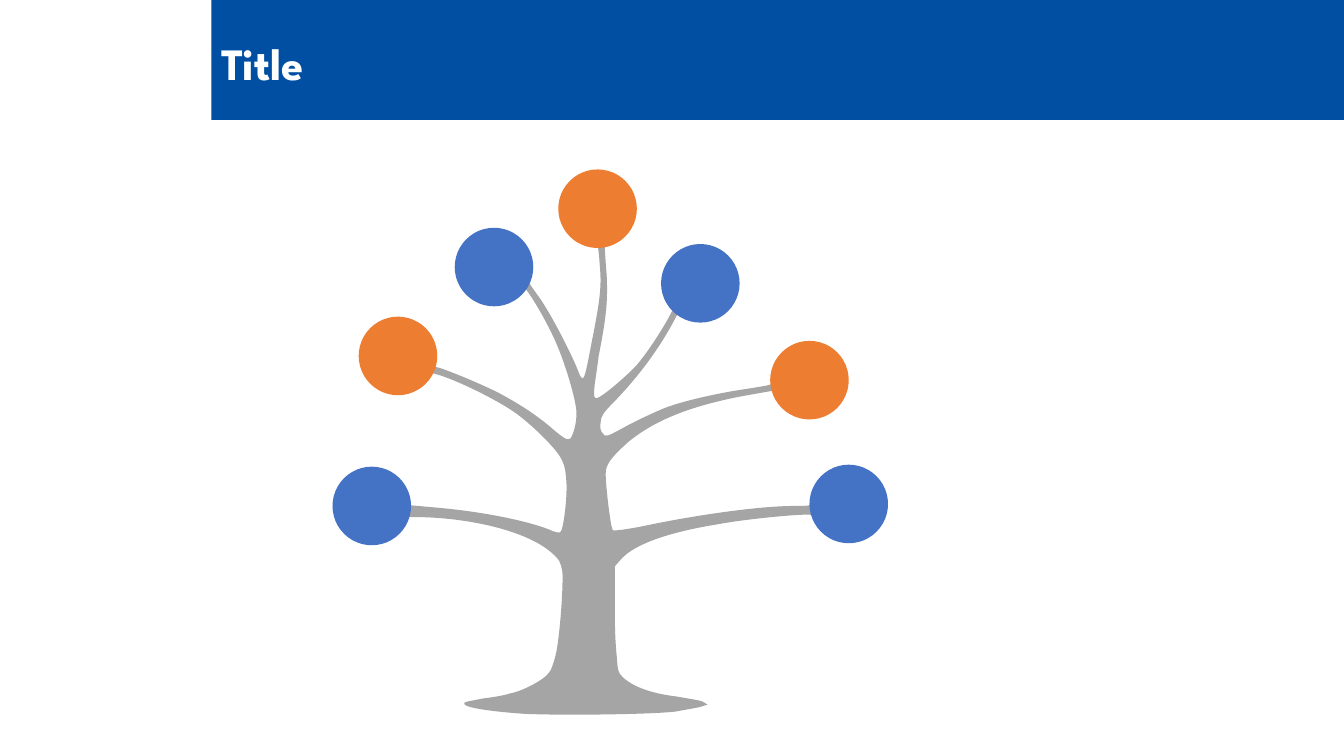
from dataclasses import dataclass

from lxml import etree
from pptx import Presentation
from pptx.dml.color import RGBColor
from pptx.enum.shapes import MSO_SHAPE
from pptx.enum.text import MSO_ANCHOR
from pptx.oxml.ns import qn
from pptx.util import Cm, Pt

RECTANGLE, OVAL = MSO_SHAPE.RECTANGLE, MSO_SHAPE.OVAL
MIDDLE = MSO_ANCHOR.MIDDLE


@dataclass(frozen=True)
class Theme:
    font: str = "League Spartan"
    title_size: int = 32
    white: str = "FFFFFF"
    banner: str = "014FA2"
    trunk: str = "A5A5A5"
    orange: str = "ED7D31"
    blue: str = "4472C4"


SLIDE_WIDTH, SLIDE_HEIGHT = 33.87, 19.05
BANNER_LEFT, BANNER_HEIGHT = 5.33, 3.02
BANNER_WIDTH = SLIDE_WIDTH - BANNER_LEFT
TITLE_TOP, TITLE_HEIGHT = 0.84, 1.45
TITLE_INDENT = 1
FRUIT_SIZE = 1.98
ORANGE_FRUITS = [(9.04, 7.98), (14.07, 4.27), (19.41, 8.59)]
BLUE_FRUITS = [(8.38, 11.76), (11.46, 5.74), (16.66, 6.15), (20.4, 11.71)]

# Tree outline in units of 0.25 mm: each row is two control points and an end point.
TREE_UNIT = Cm(2.54) / 100
TREE_START = (589, 237)
TOP_BRANCH_LEFT = [
    (593, 240, 594, 246, 595, 262), (597, 283, 596, 295, 587, 340),
    (579, 382, 579, 382, 572, 364),
]
UPPER_LEFT_BRANCH = [
    (563, 343, 545, 309, 535, 295), (529, 287, 524, 279, 523, 278),
    (523, 278, 523, 277, 523, 276), (522, 278, 520, 280, 518, 283),
    (523, 286, 539, 313, 548, 332), (559, 354, 572, 397, 572, 410),
    (572, 420, 569, 431, 566, 435),
]
MIDDLE_LEFT_BRANCH = [
    (563, 437, 561, 436, 550, 427), (534, 413, 519, 403, 497, 391),
    (480, 382, 446, 368, 436, 365), (431, 364, 429, 363, 428, 361),
    (427, 364, 426, 367, 425, 370), (425, 370, 426, 370, 426, 370),
    (437, 370, 481, 390, 506, 406), (522, 416, 547, 440, 555, 452),
    (560, 460, 561, 464, 562, 478), (563, 494, 559, 526, 556, 528),
]
LOWER_LEFT_BRANCH = [
    (555, 529, 550, 528, 544, 525), (520, 516, 476, 507, 426, 503),
    (415, 502, 405, 501, 400, 501), (400, 505, 400, 509, 399, 513),
    (399, 513, 415, 513, 415, 513), (470, 514, 525, 528, 548, 549),
    (555, 555, 556, 557, 558, 567),
]
TRUNK_AND_ROOTS = [
    (559, 580, 556, 626, 552, 647), (550, 656, 547, 665, 545, 667),
    (541, 674, 518, 686, 506, 688), (500, 690, 488, 692, 479, 693),
    (470, 695, 462, 696, 461, 697), (457, 701, 478, 705, 517, 708),
    (550, 710, 644, 709, 670, 706), (681, 704, 693, 702, 696, 701),
    (696, 701, 702, 699, 702, 699), (702, 699, 697, 696, 697, 696),
    (695, 695, 683, 693, 671, 691), (647, 688, 629, 682, 618, 672),
    (613, 667, 613, 665, 612, 652), (610, 632, 610, 617, 610, 587),
    (610, 587, 610, 562, 610, 562), (610, 562, 617, 554, 617, 554),
]
LOWER_RIGHT_BRANCH = [
    (630, 540, 663, 528, 713, 520), (739, 515, 801, 509, 805, 511),
    (805, 511, 806, 511, 806, 511), (805, 508, 805, 505, 805, 501),
    (805, 500, 805, 499, 805, 498), (805, 499, 804, 500, 804, 501),
    (802, 502, 795, 502, 788, 502), (756, 502, 696, 510, 643, 521),
    (624, 525, 609, 527, 608, 526), (606, 524, 601, 483, 601, 470),
]
MIDDLE_RIGHT_BRANCH = [
    (601, 461, 606, 454, 624, 438), (651, 416, 689, 401, 748, 391),
    (748, 391, 771, 387, 771, 387), (769, 385, 768, 382, 767, 380),
    (767, 381, 766, 381, 766, 381), (765, 382, 753, 384, 740, 386),
    (712, 390, 677, 398, 659, 405), (652, 408, 636, 415, 623, 422),
    (601, 434, 601, 434, 598, 430), (596, 428, 595, 424, 596, 419),
]
UPPER_RIGHT_BRANCH = [
    (596, 413, 599, 409, 609, 399), (636, 371, 656, 343, 671, 314),
    (672, 311, 674, 308, 675, 306), (673, 305, 671, 303, 670, 302),
    (664, 316, 647, 344, 632, 362), (621, 374, 596, 395, 592, 395),
    (589, 395, 589, 393, 590, 382),
]
TOP_BRANCH_RIGHT = [
    (591, 375, 593, 362, 594, 353), (602, 313, 603, 298, 602, 274),
    (601, 261, 600, 247, 600, 243), (600, 243, 599, 237, 599, 237),
    (597, 237, 596, 237, 594, 237), (592, 237, 590, 237, 589, 237),
]
TREE_CURVES = (
    TOP_BRANCH_LEFT + UPPER_LEFT_BRANCH + MIDDLE_LEFT_BRANCH + LOWER_LEFT_BRANCH
    + TRUNK_AND_ROOTS + LOWER_RIGHT_BRANCH + MIDDLE_RIGHT_BRANCH
    + UPPER_RIGHT_BRANCH + TOP_BRANCH_RIGHT
)


def write_text(box, text, *, font, size, color, bold=False, hanging=0):
    para = box.text_frame.paragraphs[0]
    properties = para._p.get_or_add_pPr()
    properties.set("marL", str(Cm(hanging)))
    properties.set("indent", str(-Cm(hanging)))
    span = para.add_run()
    span.text = text
    span.font.name = font
    span.font.size = Pt(size)
    span.font.bold = bold
    span.font.color.rgb = RGBColor.from_string(color)


class Page:
    """Draws on one slide in the style of a theme; lengths are centimetres."""

    def __init__(self, slide, theme):
        self.shapes = slide.shapes
        self.theme = theme

    def paint(self, shape, color):
        shape.shadow.inherit = False
        shape.fill.solid()
        shape.fill.fore_color.rgb = RGBColor.from_string(color)
        shape.line.fill.background()

    def shape(self, kind, left, top, width, height, color):
        shape = self.shapes.add_shape(kind, Cm(left), Cm(top), Cm(width), Cm(height))
        self.paint(shape, color)

    def title(self, text, left, top, width, height):
        box = self.shapes.add_textbox(Cm(left), Cm(top), Cm(width), Cm(height))
        box.text_frame.word_wrap = True
        box.text_frame.vertical_anchor = MIDDLE
        write_text(box, text, font=self.theme.font, size=self.theme.title_size,
                   color=self.theme.white, bold=True, hanging=TITLE_INDENT)

    def curved_outline(self, start, curves, unit, color):
        """Build an outline through all points, then bend each three lines into a curve."""
        points = [row[i:i + 2] for row in curves for i in (0, 2, 4)]
        builder = self.shapes.build_freeform(*start, scale=unit)
        builder.add_line_segments(points, close=True)
        shape = builder.convert_to_shape()
        lines = list(shape._element.iter(qn("a:lnTo")))
        for first in range(0, len(lines), 3):
            curve = etree.Element(qn("a:cubicBezTo"))
            lines[first].addprevious(curve)
            for line in lines[first:first + 3]:
                curve.append(line[0])
                line.getparent().remove(line)
        self.paint(shape, color)


def main():
    deck = Presentation()
    deck.slide_width, deck.slide_height = Cm(SLIDE_WIDTH), Cm(SLIDE_HEIGHT)
    theme = Theme()
    page = Page(deck.slides.add_slide(deck.slide_layouts[6]), theme)

    page.shape(RECTANGLE, BANNER_LEFT, 0, BANNER_WIDTH, BANNER_HEIGHT, theme.banner)
    page.title("Title", BANNER_LEFT, TITLE_TOP, BANNER_WIDTH, TITLE_HEIGHT)
    page.curved_outline(TREE_START, TREE_CURVES, TREE_UNIT, theme.trunk)
    for color, fruits in ((theme.orange, ORANGE_FRUITS), (theme.blue, BLUE_FRUITS)):
        for left, top in fruits:
            page.shape(OVAL, left, top, FRUIT_SIZE, FRUIT_SIZE, color)

    deck.save("out.pptx")


if __name__ == "__main__":
    main()
